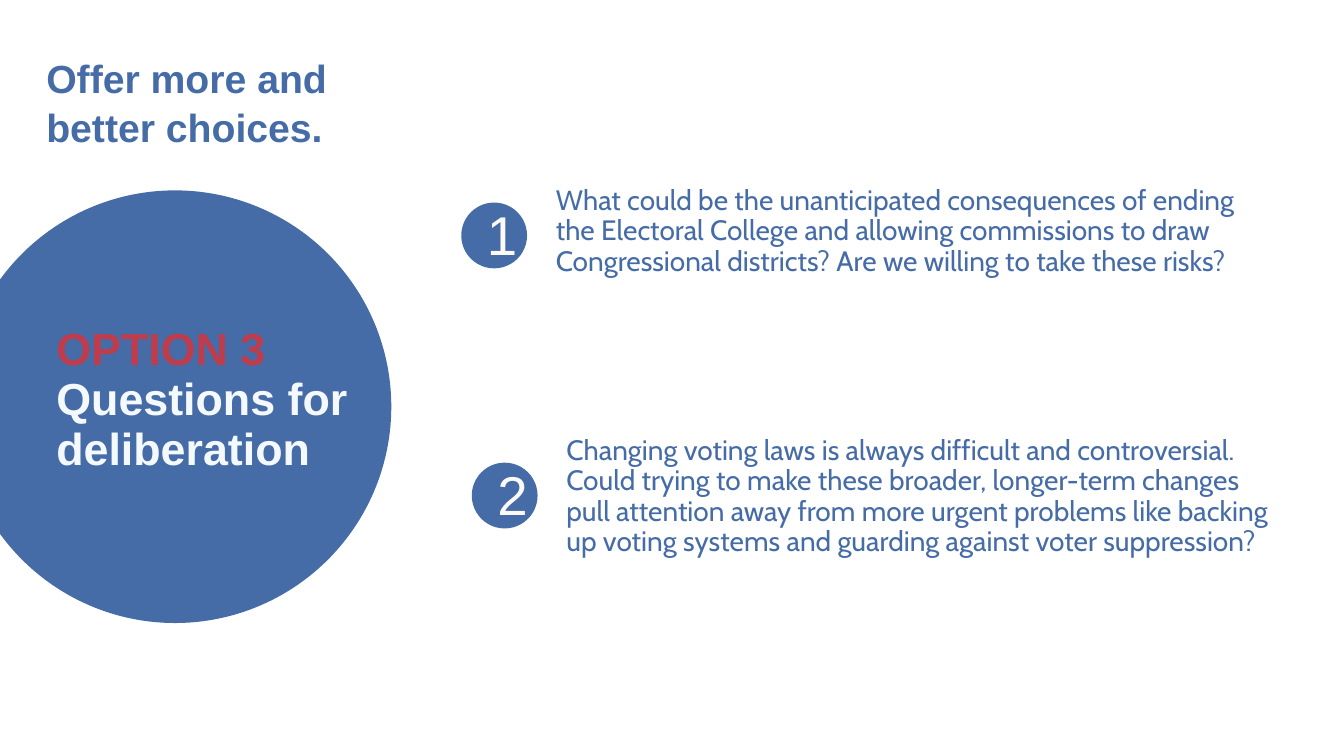
from pptx import Presentation
from pptx.dml.color import RGBColor
from pptx.enum import shapes, text
from pptx.util import Pt

BLUE = "466CA7"
RED = "BE3C4C"
PALE_BLUE = "F4F9FE"
CREAM = "FDFAF5"


def color(hex_string):
    """Turn a hex string into a colour."""
    return RGBColor.from_string(hex_string)


def add_disc(parent, left, top, diameter):
    """Add a plain blue circle."""
    disc = parent.shapes.add_shape(
        shapes.MSO_SHAPE.OVAL, Pt(left), Pt(top), Pt(diameter), Pt(diameter))
    disc.shadow.inherit = False
    disc.fill.solid()
    disc.fill.fore_color.rgb = color(BLUE)
    disc.line.fill.background()


def add_text(parent, box, lines, size, font="Arial", bold=False, spacing=1.0,
             inset=None, middle=False, wrap=True):
    """Add a text box with one paragraph for each (wording, colour) pair."""
    frame = parent.shapes.add_textbox(*map(Pt, box)).text_frame
    frame.word_wrap = wrap
    frame.vertical_anchor = text.MSO_ANCHOR.MIDDLE if middle else text.MSO_ANCHOR.TOP
    if inset is not None:
        frame.margin_left = frame.margin_right = Pt(inset)
        frame.margin_top = frame.margin_bottom = Pt(inset)
    for index, (wording, hex_string) in enumerate(lines):
        paragraph = frame.paragraphs[0] if index == 0 else frame.add_paragraph()
        paragraph.text = wording
        paragraph.alignment = text.PP_ALIGN.LEFT
        paragraph.line_spacing = spacing
        paragraph.font.name = font
        paragraph.font.size = Pt(size)
        paragraph.font.bold = bold
        paragraph.font.color.rgb = color(hex_string)


def add_option_circle(slide, left, top, diameter):
    """Add the large circle with the option name and its heading."""
    add_disc(slide, left, top, diameter)
    lines = [("OPTION 3", RED), ("Questions for deliberation", PALE_BLUE)]
    add_text(slide, (left + 67.7, top + 94.5, 265, 109), lines, 32,
             bold=True, spacing=0.93, inset=2)


def add_question(slide, left, top, width, number, question):
    """Add a numbered disc with its question to the right."""
    group = slide.shapes.add_group_shape()
    add_disc(group, left, top, 47)
    add_text(group, (left + 11.2, top - 14, 46, 72), [(str(number), CREAM)],
             39, middle=True)
    question_top = top - 9.3 if number == 1 else top - 5.8
    add_text(group, (left + 60.5, question_top, width - 60.5, 60.5),
             [(question, BLUE)], 20, font="Cabin", spacing=0.9, middle=True)


def add_title(slide, left, top, width, height):
    """Add the two-line title."""
    lines = [("Offer more and", BLUE), ("better choices.", BLUE)]
    add_text(slide, (left, top, width, height), lines, 28, bold=True,
             spacing=1.04, inset=0, wrap=False)


def main():
    """Build and save the slide."""
    presentation = Presentation()
    presentation.slide_width, presentation.slide_height = Pt(960), Pt(540)
    slide = presentation.slides.add_slide(presentation.slide_layouts[6])
    add_option_circle(slide, -29.5, 136, 309)
    add_question(
        slide, 329.5, 144.7, 573, 1,
        "What could be the unanticipated consequences of ending the Electoral "
        "College and allowing commissions to draw Congressional districts? "
        "Are we willing to take these risks?")
    add_question(
        slide, 337, 330.5, 584, 2,
        "Changing voting laws is always difficult and controversial. Could "
        "trying to make these broader, longer-term changes pull attention away "
        "from more urgent problems like backing up voting systems and guarding "
        "against voter suppression?")
    add_title(slide, 33.1, 37.5, 276.5, 85.7)
    presentation.save("out.pptx")


if __name__ == "__main__":
    main()
